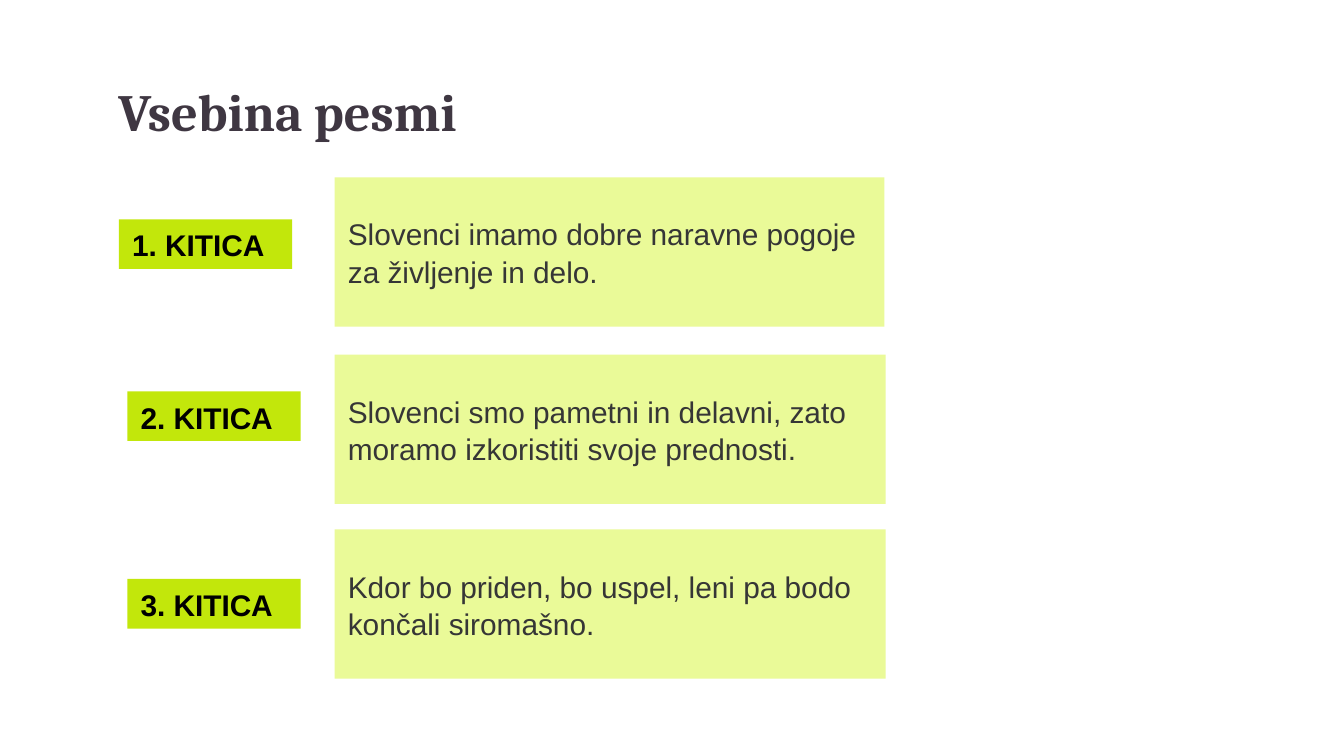
from dataclasses import dataclass

import pptx
import pptx.dml.color
import pptx.enum.shapes
import pptx.enum.text
import pptx.util

Pt = pptx.util.Pt
Anchor = pptx.enum.text.MSO_ANCHOR


@dataclass(frozen=True)
class Theme:
    title_font: str = "Cambria"
    body_font: str = "Arial"
    title_size: float = 28
    body_size: float = 16
    title_color: str = "3F3742"
    summary_color: str = "363636"
    label_color: str = "000000"
    summary_fill: str = "EAFA98"
    label_fill: str = "C2E70B"
    line_spacing: float = 1.05


@dataclass(frozen=True)
class Stanza:
    label: str
    summary: str
    label_left: float
    label_top: float
    summary_top: float
    summary_width: float


THEME = Theme()
LABEL_WIDTH, LABEL_HEIGHT = 92.9, 26.6
SUMMARY_LEFT, SUMMARY_HEIGHT = 179.3, 80

STANZAS = [
    Stanza("1. KITICA", "Slovenci imamo dobre naravne pogoje za življenje in delo.",
           63.7, 117.5, 95, 294.5),
    Stanza("2. KITICA", "Slovenci smo pametni in delavni, zato moramo izkoristiti svoje prednosti.",
           68.2, 209.7, 190, 295.2),
    Stanza("3. KITICA", "Kdor bo priden, bo uspel, leni pa bodo končali siromašno.",
           68.2, 310.2, 283.6, 295.2),
]


def style_text(frame: pptx.text.text.TextFrame, font_name: str, size: float,
               color: str, bold: bool) -> None:
    frame.word_wrap = True
    para = frame.paragraphs[0]
    para.alignment = pptx.enum.text.PP_ALIGN.LEFT
    for span in para.runs:
        span.font.name = font_name
        span.font.size = Pt(size)
        span.font.bold = bold
        span.font.color.rgb = pptx.dml.color.RGBColor.from_string(color)


def add_box(page: pptx.slide.Slide, text: str, left: float, top: float, width: float,
            height: float, fill: str, color: str, bold: bool = False) -> None:
    box = page.shapes.add_shape(pptx.enum.shapes.MSO_SHAPE.RECTANGLE,
                                Pt(left), Pt(top), Pt(width), Pt(height))
    box.shadow.inherit = False
    box.fill.solid()
    box.fill.fore_color.rgb = pptx.dml.color.RGBColor.from_string(fill)
    box.line.fill.background()
    frame = box.text_frame
    frame.text = text
    frame.vertical_anchor = Anchor.MIDDLE
    frame.paragraphs[0].line_spacing = THEME.line_spacing
    style_text(frame, THEME.body_font, THEME.body_size, color, bold)


def add_title(page: pptx.slide.Slide, text: str) -> None:
    title = page.shapes.title
    title.left, title.top, title.width, title.height = Pt(56.2), Pt(35.3), Pt(607.7), Pt(45.4)
    frame = title.text_frame
    frame.text = text
    frame.auto_size = pptx.enum.text.MSO_AUTO_SIZE.NONE
    frame.vertical_anchor = Anchor.TOP
    frame.margin_left = frame.margin_right = Pt(7.2)
    frame.margin_top = frame.margin_bottom = Pt(7.2)
    style_text(frame, THEME.title_font, THEME.title_size, THEME.title_color, True)


def add_stanza(page: pptx.slide.Slide, stanza: Stanza) -> None:
    add_box(page, stanza.summary, SUMMARY_LEFT, stanza.summary_top, stanza.summary_width,
            SUMMARY_HEIGHT, THEME.summary_fill, THEME.summary_color)
    add_box(page, stanza.label, stanza.label_left, stanza.label_top, LABEL_WIDTH,
            LABEL_HEIGHT, THEME.label_fill, THEME.label_color, bold=True)


def main() -> None:
    deck = pptx.Presentation()
    deck.slide_width, deck.slide_height = Pt(720), Pt(405)
    page = deck.slides.add_slide(deck.slide_layouts[5])

    # Heading
    add_title(page, "Vsebina pesmi")

    # One label and one summary for each stanza
    for stanza in STANZAS:
        add_stanza(page, stanza)

    deck.save("out.pptx")


if __name__ == "__main__":
    main()
